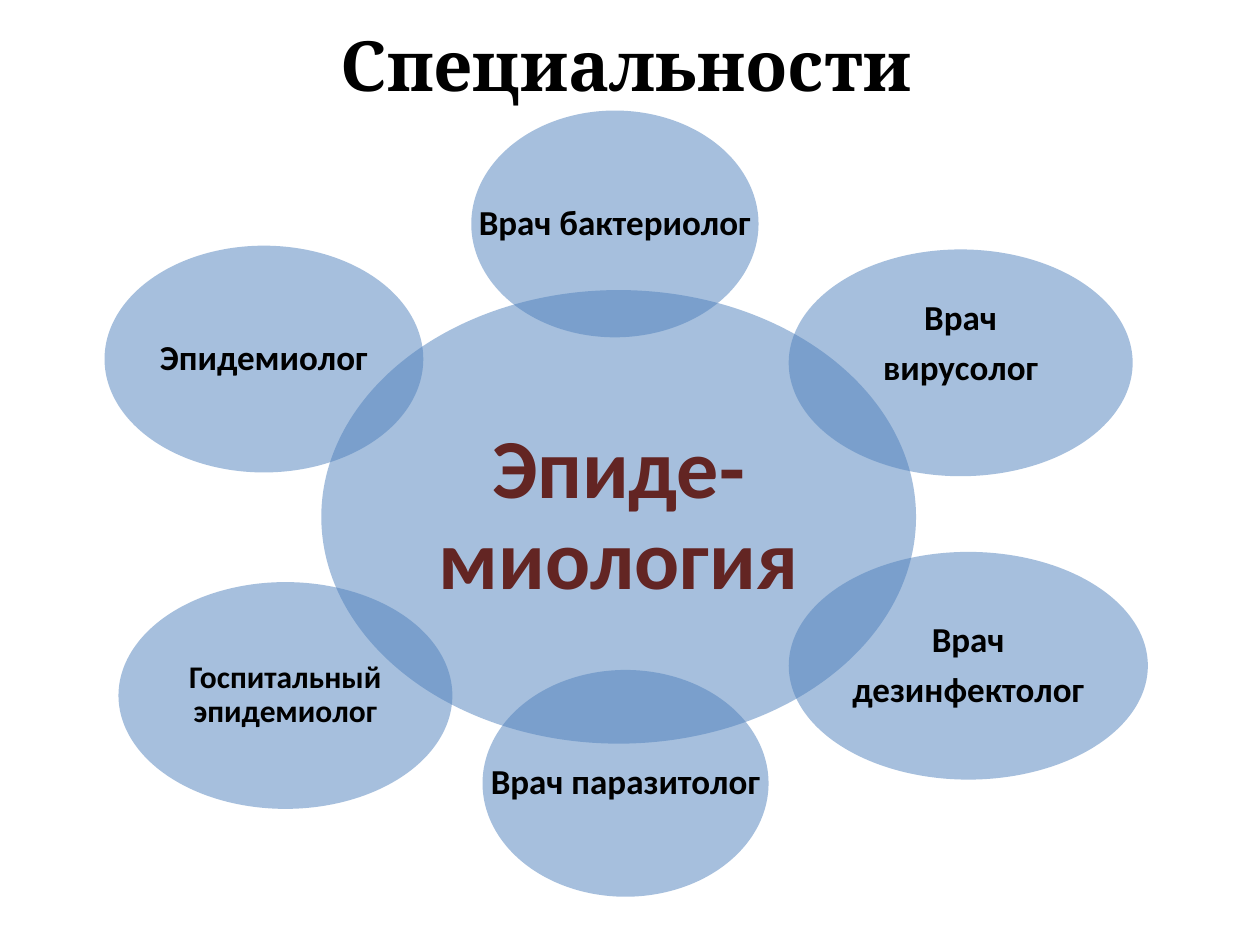
from dataclasses import dataclass

from lxml.etree import SubElement
from pptx import Presentation
from pptx.dml.color import RGBColor
from pptx.enum.shapes import MSO_SHAPE
from pptx.enum.text import MSO_ANCHOR, MSO_AUTO_SIZE, PP_ALIGN
from pptx.oxml.ns import qn
from pptx.util import Inches, Pt

BLUE = RGBColor(0x4F, 0x81, 0xBD)
MAROON = RGBColor(0x63, 0x25, 0x23)
BLACK = RGBColor(0, 0, 0)

SLIDE_WIDTH = Inches(10)
SLIDE_HEIGHT = Inches(7.5)
OPACITY = 50
LINE_SPACING = 0.9
GAP_SHARE = 0.35


@dataclass(frozen=True)
class Petal:
    label: str
    left: float
    top: float
    width: float
    height: float = 24
    size: float = 20
    color: RGBColor = BLACK
    inset: float = 0.03
    lift: float = 0
    wrap: bool = True


PETALS = [
    Petal("Эпиде-миология", 25.5, 30.7, 47.2, 48, size=48, color=MAROON, inset=0.07),
    Petal("Врач бактериолог", 37.4, 11.7, 22.8, wrap=False),
    Petal("Врач\nвирусолог", 62.6, 26.4, 27.3, lift=0.15),
    Petal("Врач\nдезинфектолог", 62.6, 58.4, 28.5, 24.1, wrap=False),
    Petal("Врач паразитолог", 38.3, 70.9, 22.7, wrap=False),
    Petal("Эпидемиолог", 8.3, 26, 25.3),
    Petal("Госпитальный эпидемиолог", 9.4, 61.6, 26.5, size=18),
]


def across(percent: float) -> int:
    return round(SLIDE_WIDTH * percent / 100)


def down(percent: float) -> int:
    return round(SLIDE_HEIGHT * percent / 100)


def style_text(frame, font_name: str, size: float, color: RGBColor) -> None:
    frame.vertical_anchor = MSO_ANCHOR.MIDDLE
    for paragraph in frame.paragraphs:
        paragraph.alignment = PP_ALIGN.CENTER
        for run in paragraph.runs:
            run.font.name = font_name
            run.font.size = Pt(size)
            run.font.bold = True
            run.font.color.rgb = color


def draw_petal(slide, petal: Petal) -> None:
    ellipse = slide.shapes.add_shape(
        MSO_SHAPE.OVAL, across(petal.left), down(petal.top),
        across(petal.width), down(petal.height))
    ellipse.shadow.inherit = False
    ellipse.line.fill.background()
    ellipse.fill.solid()
    ellipse.fill.fore_color.rgb = BLUE
    tint = ellipse.fill._xPr.find(qn("a:solidFill"))[0]
    SubElement(tint, qn("a:alpha")).set("val", str(OPACITY * 1000))

    frame = ellipse.text_frame
    frame.word_wrap = petal.wrap
    frame.margin_left = frame.margin_right = frame.margin_top = Inches(petal.inset)
    frame.margin_bottom = Inches(petal.inset + 2 * petal.lift)
    frame.text = petal.label
    style_text(frame, "Calibri", petal.size, petal.color)
    for paragraph in frame.paragraphs:
        paragraph.line_spacing = LINE_SPACING
        paragraph.space_after = Pt(petal.size * GAP_SHARE)


def draw_title(slide, heading: str) -> None:
    title = slide.shapes.title
    title.left, title.top = across(4.7), down(2.1)
    title.width, title.height = across(90), down(9.3)
    title.text_frame.text = heading
    title.text_frame.auto_size = MSO_AUTO_SIZE.NONE
    style_text(title.text_frame, "Cambria", 39.6, BLACK)


def main() -> None:
    presentation = Presentation()
    presentation.slide_width = SLIDE_WIDTH
    presentation.slide_height = SLIDE_HEIGHT
    slide = presentation.slides.add_slide(presentation.slide_layouts[5])
    draw_title(slide, "Специальности")
    for petal in PETALS:
        draw_petal(slide, petal)
    presentation.save("out.pptx")


if __name__ == "__main__":
    main()
